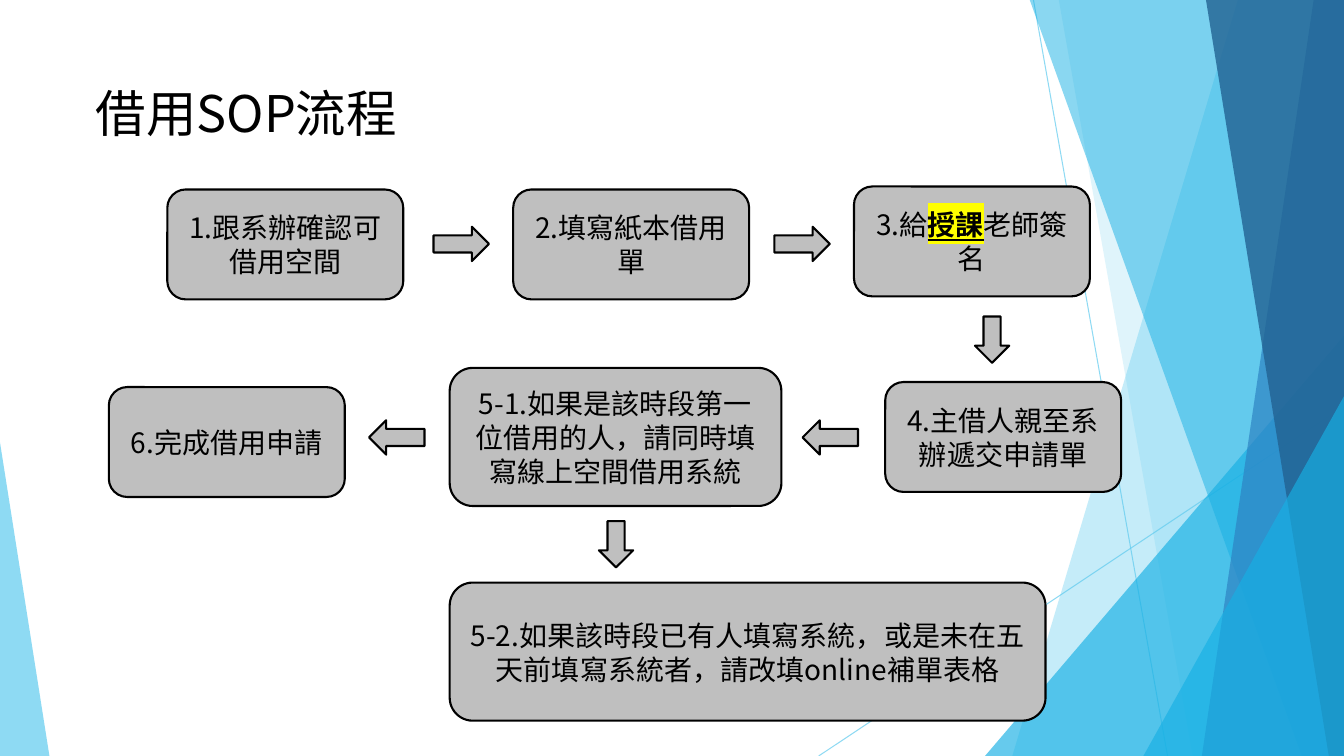
from lxml.etree import SubElement
from pptx import Presentation
from pptx.dml.color import RGBColor
from pptx.enum.shapes import MSO_CONNECTOR, MSO_SHAPE
from pptx.enum.text import MSO_ANCHOR, MSO_AUTO_SIZE, PP_ALIGN
from pptx.oxml.ns import qn
from pptx.util import Inches, Pt

FONT = "Noto Sans CJK SC"


def paint(color_format, hex_color, opacity=100):
    color_format.rgb = RGBColor.from_string(hex_color)
    if opacity < 100:
        srgb = color_format._xFill.find(qn("a:srgbClr"))
        SubElement(srgb, qn("a:alpha"), val=str(opacity * 1000))


def style_paragraph(paragraph, size, leading):
    paragraph.line_spacing = Pt(leading)
    paragraph.font.size = Pt(size)
    paint(paragraph.font.color, "000000")
    paragraph.font.name = FONT
    SubElement(paragraph.font._element, qn("a:ea"), typeface=FONT)


prs = Presentation()
prs.slide_width, prs.slide_height = Inches(13.33), Inches(7.5)
slide = prs.slides.add_slide(prs.slide_layouts[5])
shapes = slide.shapes

# Thin background lines
for x1, y1, x2, y2 in [(10.25, 0, 11.58, 7.5), (13.33, 4.03, 8.12, 7.5)]:
    ray = shapes.add_connector(MSO_CONNECTOR.STRAIGHT,
                               Inches(x1), Inches(y1), Inches(x2), Inches(y2))
    ray.line.width = Pt(0.75)
    ray.line.fill.solid()
    paint(ray.line.fill.fore_color, "5FCBEF", 70)
    SubElement(ray._element.spPr, qn("a:effectLst"))

# Background facets: bands (top x, bottom x) reach the right edge,
# triangles (left, top, width, height, apex) stand on the bottom edge
facets = [
    ((12.28, 10.04), "5FCBEF", 36),
    ((10.5, 11.83), "5FCBEF", 20),
    ((9.77, 3.33, 3.56, 4.17, 1), "17B0E4", 66),
    ((10.21, 12.91), "17B0E4", 50),
    ((13.03, 11.92), "2E83C3", 70),
    ((11.96, 13.18), "226292", 80),
    ((11.34, 3.93, 1.99, 3.57, 1), "17B0E4", 66),
    ((0, 4.39, 0.49, 3.11, 0), "5FCBEF", 70),
]
for geometry, color, opacity in facets:
    if len(geometry) == 2:
        top_x, bottom_x = geometry
        outline = shapes.build_freeform(Inches(top_x), Inches(-0.01))
        outline.add_line_segments([(Inches(x), Inches(y)) for x, y in
                                   [(13.33, -0.01), (13.33, 7.5), (bottom_x, 7.5)]])
        facet = outline.convert_to_shape()
    else:
        *box, apex = geometry
        facet = shapes.add_shape(MSO_SHAPE.ISOSCELES_TRIANGLE, *map(Inches, box))
        facet.adjustments[0] = apex
    facet.shadow.inherit = False
    facet.fill.solid()
    paint(facet.fill.fore_color, color, opacity)
    facet.line.fill.background()

# Title
title = shapes.title
title.left, title.top, title.width, title.height = map(Inches, (0.85, 0.75, 4.18, 1.14))
title.text_frame.text = "借用SOP流程"
title.text_frame.auto_size = MSO_AUTO_SIZE.NONE
title.text_frame.vertical_anchor = MSO_ANCHOR.TOP
heading = title.text_frame.paragraphs[0]
heading.alignment = PP_ALIGN.LEFT
style_paragraph(heading, 36, 44)

# Steps and the arrows between them
STEP = (2.34, 1.09)
steps = [
    (1.66, 1.88, *STEP, "1.跟系辦確認可借用空間"),
    (5.09, 1.88, *STEP, "2.填寫紙本借用單"),
    (8.47, 1.85, *STEP, "3.給授課老師簽名"),
    (8.78, 3.79, *STEP, "4.主借人親至系辦遞交申請單"),
    (4.46, 3.65, 3.29, 1.37, "5-1.如果是該時段第一位借用的人，請同時填寫線上空間借用系統"),
    (4.46, 5.78, 5.91, 1.37, "5-2.如果該時段已有人填寫系統，或是未在五天前填寫系統者，請改填online補單表格"),
    (1.08, 3.84, *STEP, "6.完成借用申請"),
]
arrows = [
    (4.3, 2.25, 0.55, 0),
    (7.68, 2.25, 0.55, 0),
    (9.61, 3.2, 0.46, 90),
    (7.96, 4.17, 0.55, 180),
    (5.88, 5.23, 0.46, 90),
    (3.66, 4.17, 0.55, 180),
]
flow = [(MSO_SHAPE.ROUNDED_RECTANGLE, box, 0, text) for *box, text in steps]
flow += [(MSO_SHAPE.RIGHT_ARROW, (x, y, length, 0.34), turn, "")
         for x, y, length, turn in arrows]

for kind, box, turn, text in flow:
    node = shapes.add_shape(kind, *map(Inches, box))
    node.rotation = turn
    node.shadow.inherit = False
    node.fill.solid()
    paint(node.fill.fore_color, "BFBFBF")
    node.line.width = Pt(1.5)
    node.line.fill.solid()
    paint(node.line.fill.fore_color, "000000")
    if not text:
        continue
    node.text_frame.word_wrap = True
    node.text_frame.vertical_anchor = MSO_ANCHOR.MIDDLE
    label = node.text_frame.paragraphs[0]
    label.alignment = PP_ALIGN.CENTER
    style_paragraph(label, 20, 24.3)
    # The teacher's role is highlighted
    for part in filter(None, text.partition("授課")):
        run = label.add_run()
        run.text = part
        if part == "授課":
            run.font.bold = run.font.underline = True
            highlight = SubElement(run.font._element, qn("a:highlight"))
            SubElement(highlight, qn("a:srgbClr"), val="FFFF00")

prs.save("out.pptx")
